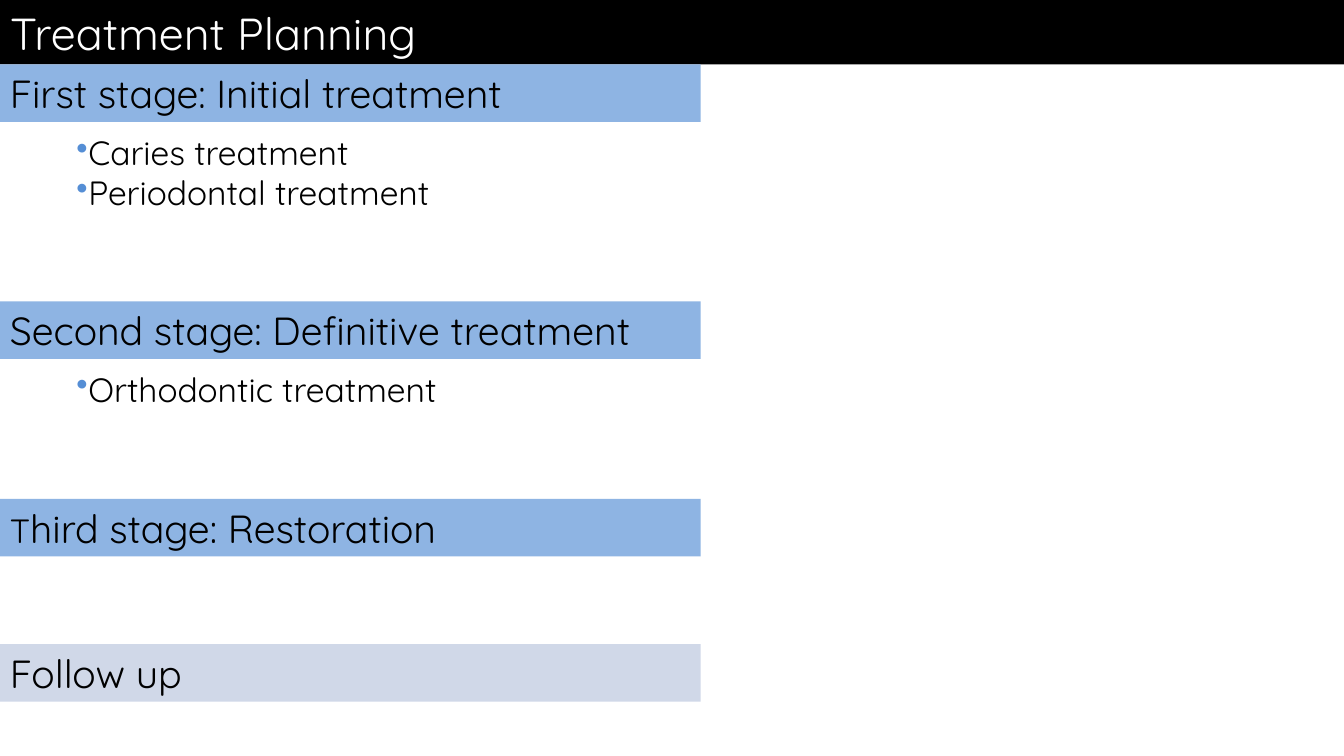
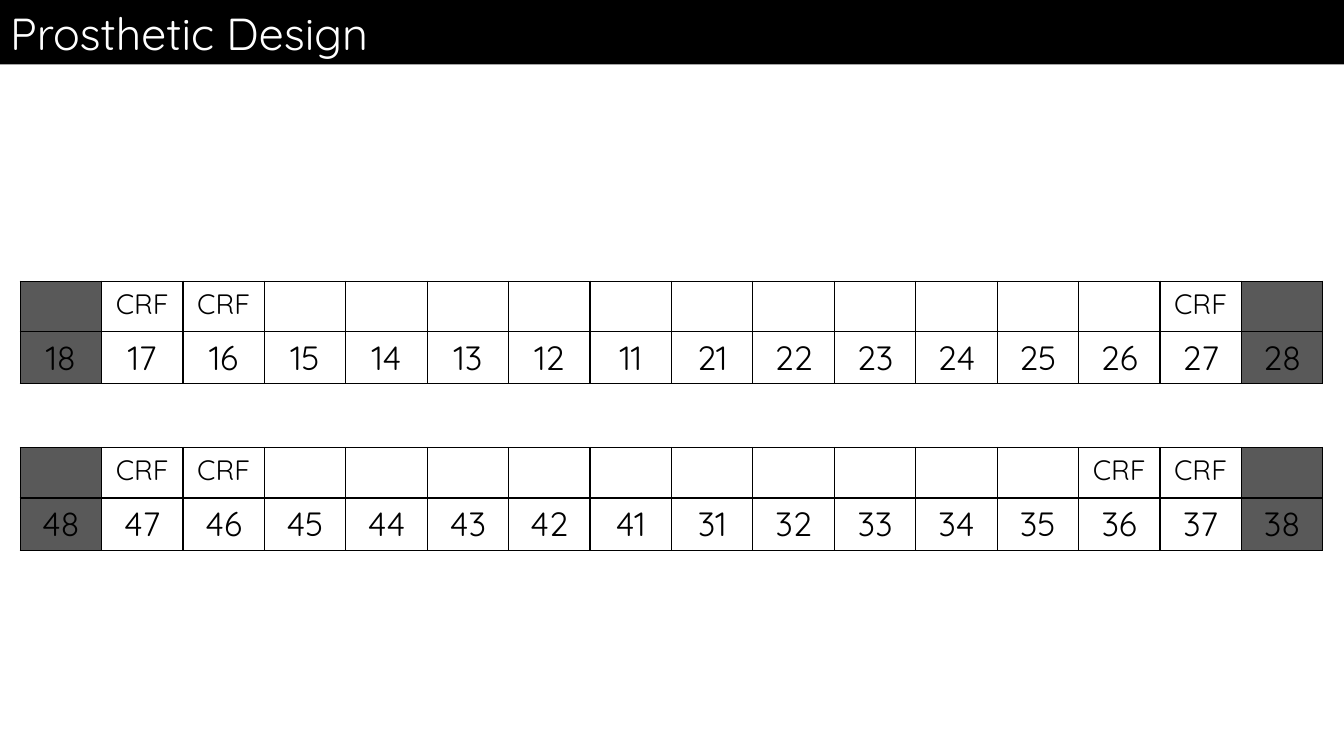
from lxml.etree import SubElement
from pptx import Presentation
from pptx.dml.color import RGBColor
from pptx.enum.shapes import MSO_SHAPE
from pptx.enum.text import MSO_ANCHOR, MSO_AUTO_SIZE, PP_ALIGN
from pptx.oxml.ns import qn
from pptx.util import Inches, Pt

FONT = "Quicksand"
BLACK = RGBColor(0x00, 0x00, 0x00)
WHITE = RGBColor(0xFF, 0xFF, 0xFF)
BLUE = RGBColor(0x8E, 0xB4, 0xE3)
PALE = RGBColor(0xD0, 0xD8, 0xE8)
BULLET = RGBColor(0x55, 0x8E, 0xD5)
GREY = RGBColor(0x59, 0x59, 0x59)

# Stages: top, fill, runs of (text, size), bullet items
STAGES = [
    (0.64, BLUE, [("First stage: Initial treatment", 28)],
     ["Caries treatment", "Periodontal treatment"]),
    (2.99, BLUE, [("Second stage: Definitive treatment", 28)],
     ["Orthodontic treatment"]),
    (4.95, BLUE, [("T", 24), ("hird stage: Restoration", 28)], []),
    (6.39, PALE, [("Follow up", 28)], []),
]
BAND_W, BAND_H = 6.95, 0.57

# Tooth charts: top, right quadrant, left quadrant, treatment by tooth
CHARTS = [
    (2.79, 1, 2, {17: "CRF", 16: "CRF", 27: "CRF"}),
    (4.44, 4, 3, {47: "CRF", 46: "CRF", 36: "CRF", 37: "CRF"}),
]
TEETH = 8
WISDOM = 8
TABLE_X, TABLE_W, ROW_H = 0.2, 12.92, 0.5


def style(font, size, color=BLACK):
    font.name = FONT
    font.size = Pt(size)
    font.color.rgb = color


def add_slide(prs, title):
    """Add a slide whose title is a black band across the top."""
    s = prs.slides.add_slide(prs.slide_layouts[5])
    band = s.shapes.title
    band.left, band.top = Inches(0), Inches(0)
    band.width, band.height = prs.slide_width, Inches(0.64)
    band.fill.solid()
    band.fill.fore_color.rgb = BLACK
    tf = band.text_frame
    tf.text = title
    tf.auto_size = MSO_AUTO_SIZE.NONE
    tf.vertical_anchor = MSO_ANCHOR.MIDDLE
    p = tf.paragraphs[0]
    p.alignment = PP_ALIGN.LEFT
    style(p.runs[0].font, 32, WHITE)
    return s


def add_band(s, top, fill, runs):
    sp = s.shapes.add_shape(MSO_SHAPE.RECTANGLE, Inches(0), Inches(top),
                            Inches(BAND_W), Inches(BAND_H))
    sp.shadow.inherit = False
    sp.fill.solid()
    sp.fill.fore_color.rgb = fill
    sp.line.fill.background()
    p = sp.text_frame.paragraphs[0]
    p.alignment = PP_ALIGN.LEFT
    for text, size in runs:
        r = p.add_run()
        r.text = text
        style(r.font, size)


def add_bullets(s, top, items):
    box = s.shapes.add_textbox(Inches(0.66), Inches(top), Inches(4.21),
                               Inches(0.1 + 0.4 * len(items)))
    tf = box.text_frame
    tf.word_wrap = True
    tf.text = "\n".join(items)
    for p in tf.paragraphs:
        pPr = p._p.get_or_add_pPr()
        color = SubElement(pPr, qn("a:buClr"))
        SubElement(color, qn("a:srgbClr")).set("val", str(BULLET))
        SubElement(pPr, qn("a:buChar")).set("char", "•")
        style(p.runs[0].font, 24)


def set_borders(cell):
    tcPr = cell._tc.get_or_add_tcPr()
    for i, side in enumerate(("a:lnL", "a:lnR", "a:lnT", "a:lnB")):
        ln = tcPr.makeelement(qn(side), {"w": str(Pt(1))})
        fill = SubElement(ln, qn("a:solidFill"))
        SubElement(fill, qn("a:srgbClr")).set("val", str(BLACK))
        tcPr.insert(i, ln)


def fill_cell(cell, text, size, fill):
    cell.fill.solid()
    cell.fill.fore_color.rgb = fill
    set_borders(cell)
    if text:
        cell.text = text
        p = cell.text_frame.paragraphs[0]
        p.alignment = PP_ALIGN.CENTER
        style(p.runs[0].font, size)


def add_tooth_chart(s, top, right, left, treatments):
    teeth = [right * 10 + n for n in range(TEETH, 0, -1)]
    teeth += [left * 10 + n for n in range(1, TEETH + 1)]
    table = s.shapes.add_table(2, len(teeth), Inches(TABLE_X), Inches(top),
                               Inches(TABLE_W), Inches(2 * ROW_H)).table
    table.first_row = table.horz_banding = False
    for col, tooth in enumerate(teeth):
        fill = GREY if tooth % 10 == WISDOM else WHITE
        fill_cell(table.cell(0, col), treatments.get(tooth, ""), 20, fill)
        fill_cell(table.cell(1, col), str(tooth), 24, fill)


def main():
    prs = Presentation()
    prs.slide_width, prs.slide_height = Inches(13.33), Inches(7.5)

    # Treatment stages
    s = add_slide(prs, "Treatment Planning")
    for top, fill, runs, items in STAGES:
        add_band(s, top, fill, runs)
        if items:
            add_bullets(s, top + BAND_H + 0.05, items)

    # Upper and lower tooth charts
    s = add_slide(prs, "Prosthetic Design")
    for chart in CHARTS:
        add_tooth_chart(s, *chart)

    prs.save("out.pptx")


if __name__ == "__main__":
    main()
